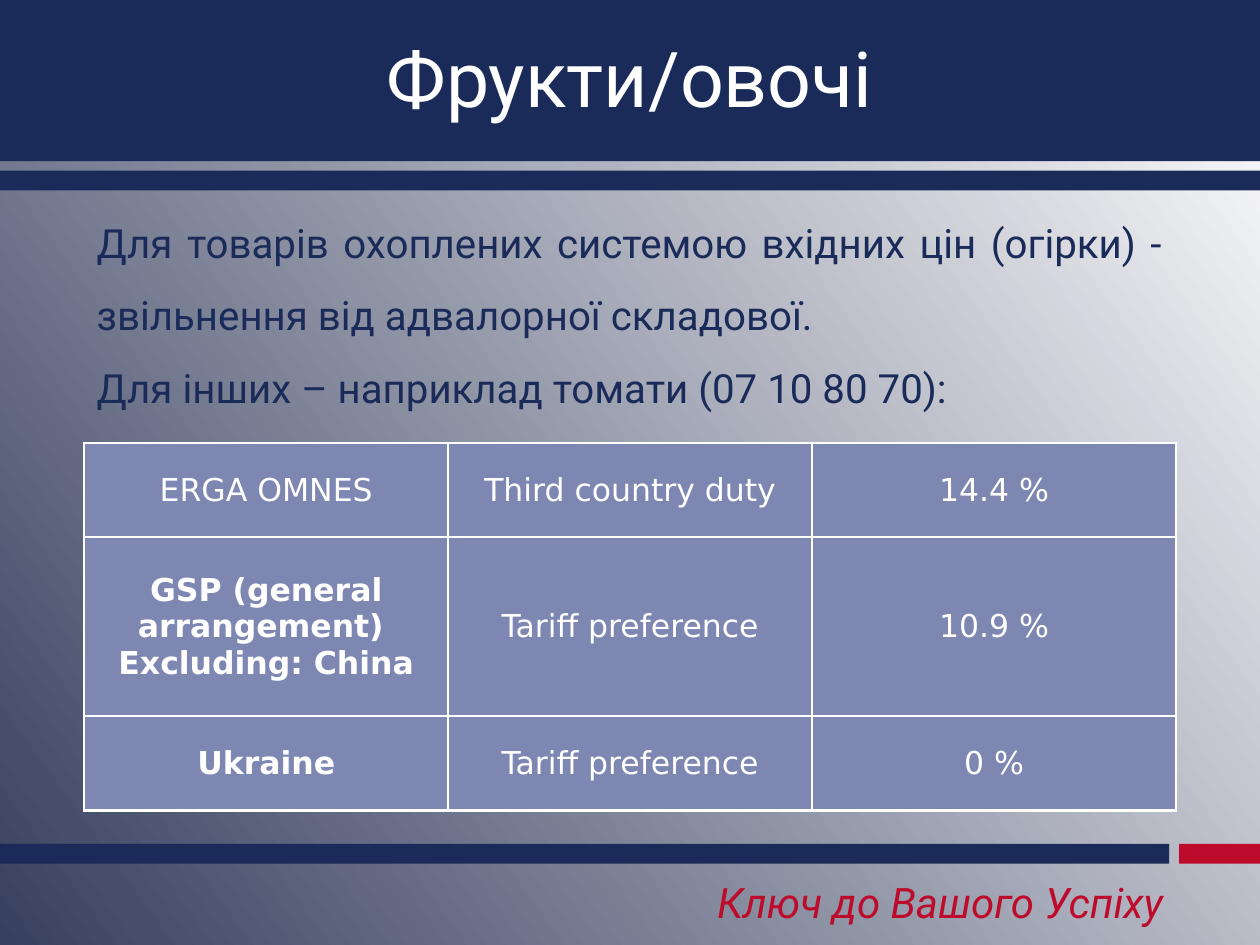
from collections import namedtuple
from dataclasses import dataclass

from lxml import etree
from pptx import Presentation
from pptx import util as u
from pptx.dml import color
from pptx.enum import shapes, text
from pptx.oxml import ns

Box = namedtuple("Box", "left top width height")  # centimetres


@dataclass(frozen=True)
class Theme:
    navy: str = "1A2B59"
    red: str = "BD0C2B"
    white: str = "FFFFFF"
    slate: str = "38405F"
    cell: str = "7D87B2"
    font: str = "Roboto"
    table_font: str = "DejaVu Sans"
    title_size: int = 44
    motto_size: int = 24
    body_size: int = 23
    table_size: int = 18
    border: float = 1.5


THEME = Theme()
ALIGN = text.PP_ALIGN
PAGE = Box(0, 0, 25.4, 19.05)
BAND_HEIGHT = 0.4

BODY = [
    "Для товарів охоплених системою вхідних цін (огірки) - звільнення від адвалорної складової.",
    "Для інших – наприклад томати (07 10 80 70):",
]
DUTIES = [
    ("ERGA OMNES", "Third country duty", "14.4 %"),
    ("GSP (general arrangement) \vExcluding: China", "Tariff preference", "10.9 %"),
    ("Ukraine", "Tariff preference", "0 %"),
]
ROW_HEIGHTS = (1.9, 3.61, 1.9)


def rgb(value):
    return color.RGBColor.from_string(value)


def lengths(box):
    return [u.Cm(value) for value in box]


def write(para, words, *, size, tint, font=THEME.font, bold=False, italic=False,
          align=ALIGN.CENTER, spacing=None):
    para.text = words
    para.alignment = align
    if spacing:
        para.line_spacing = spacing
    for span in para.runs:
        span.font.name = font
        span.font.size = u.Pt(size)
        span.font.bold = bold
        span.font.italic = italic
        span.font.color.rgb = rgb(tint)


def add_bar(page, box, tint):
    bar = page.shapes.add_shape(shapes.MSO_SHAPE.RECTANGLE, *lengths(box))
    bar.shadow.inherit = False
    bar.fill.solid()
    bar.fill.fore_color.rgb = rgb(tint)
    bar.line.fill.background()


def add_text_box(page, box, wrap):
    frame = page.shapes.add_textbox(*lengths(box)).text_frame
    frame.word_wrap = wrap
    frame.auto_size = text.MSO_AUTO_SIZE.SHAPE_TO_FIT_TEXT
    return frame


def paint_background(page):
    fill = page.background.fill
    fill.gradient()
    fill.gradient_angle = 36
    for stop, tint in zip(fill.gradient_stops, (THEME.slate, THEME.white)):
        stop.color.rgb = rgb(tint)


def add_header(page, box, words):
    band_top = box.top + box.height - BAND_HEIGHT
    add_bar(page, box._replace(height=3.25), THEME.navy)
    add_bar(page, box._replace(top=band_top, height=BAND_HEIGHT), THEME.navy)
    title = page.shapes.title
    page.shapes._spTree.append(title._element)  # in front of the bars
    title.left, title.top, title.width, title.height = lengths(
        Box(box.left + 1.27, box.top + 0.08, box.width - 2.54, 2.95))
    frame = title.text_frame
    frame.word_wrap = True
    frame.vertical_anchor = text.MSO_ANCHOR.MIDDLE
    write(frame.paragraphs[0], words, size=THEME.title_size, tint=THEME.white)


def add_footer(page, box, words):
    red_width, gap = 1.63, 0.2
    navy_width = box.width - red_width - gap
    band = box._replace(height=BAND_HEIGHT)
    add_bar(page, band._replace(width=navy_width), THEME.navy)
    add_bar(page, band._replace(left=box.left + navy_width + gap, width=red_width), THEME.red)
    motto = Box(box.left + 13.72, box.top + 0.54, 9.98, 1.3)
    frame = add_text_box(page, motto, wrap=False)
    write(frame.paragraphs[0], words, size=THEME.motto_size, tint=THEME.red,
          italic=True, align=ALIGN.RIGHT)


def add_body(page, box, lines):
    frame = add_text_box(page, box, wrap=True)
    for index, line in enumerate(lines):
        para = frame.add_paragraph() if index else frame.paragraphs[0]
        write(para, line, size=THEME.body_size, tint=THEME.navy,
              align=ALIGN.JUSTIFY, spacing=1.5)


def add_borders(cell):
    properties = cell._tc.get_or_add_tcPr()
    for side in ("a:lnL", "a:lnR", "a:lnT", "a:lnB"):
        line = etree.SubElement(properties, ns.qn(side), w=str(u.Pt(THEME.border)))
        fill = etree.SubElement(line, ns.qn("a:solidFill"))
        etree.SubElement(fill, ns.qn("a:srgbClr"), val=THEME.white)


def add_duty_table(page, box, rows):
    table = page.shapes.add_table(len(rows), len(rows[0]), *lengths(box)).table
    table.first_row = table.horz_banding = False
    for row, height in zip(table.rows, ROW_HEIGHTS):
        row.height = u.Cm(height)
    for row_index, row in enumerate(rows):
        for column_index, words in enumerate(row):
            cell = table.cell(row_index, column_index)
            add_borders(cell)
            cell.fill.solid()
            cell.fill.fore_color.rgb = rgb(THEME.cell)
            cell.vertical_anchor = text.MSO_ANCHOR.MIDDLE
            write(cell.text_frame.paragraphs[0], words, size=THEME.table_size,
                  tint=THEME.white, font=THEME.table_font,
                  bold=row_index > 0 and column_index == 0)


def main():
    deck = Presentation()
    deck.slide_width, deck.slide_height = u.Cm(PAGE.width), u.Cm(PAGE.height)
    page = deck.slides.add_slide(deck.slide_layouts.get_by_name("Title Only"))
    paint_background(page)
    add_footer(page, Box(0, 17.01, PAGE.width, 2.04), "Ключ до Вашого Успіху")
    add_header(page, Box(0, 0, PAGE.width, 3.84), "Фрукти/овочі")
    add_body(page, Box(1.7, 3.79, 22.01, 4.6), BODY)
    add_duty_table(page, Box(1.7, 8.93, 22.01, sum(ROW_HEIGHTS)), DUTIES)
    deck.save("out.pptx")


if __name__ == "__main__":
    main()
